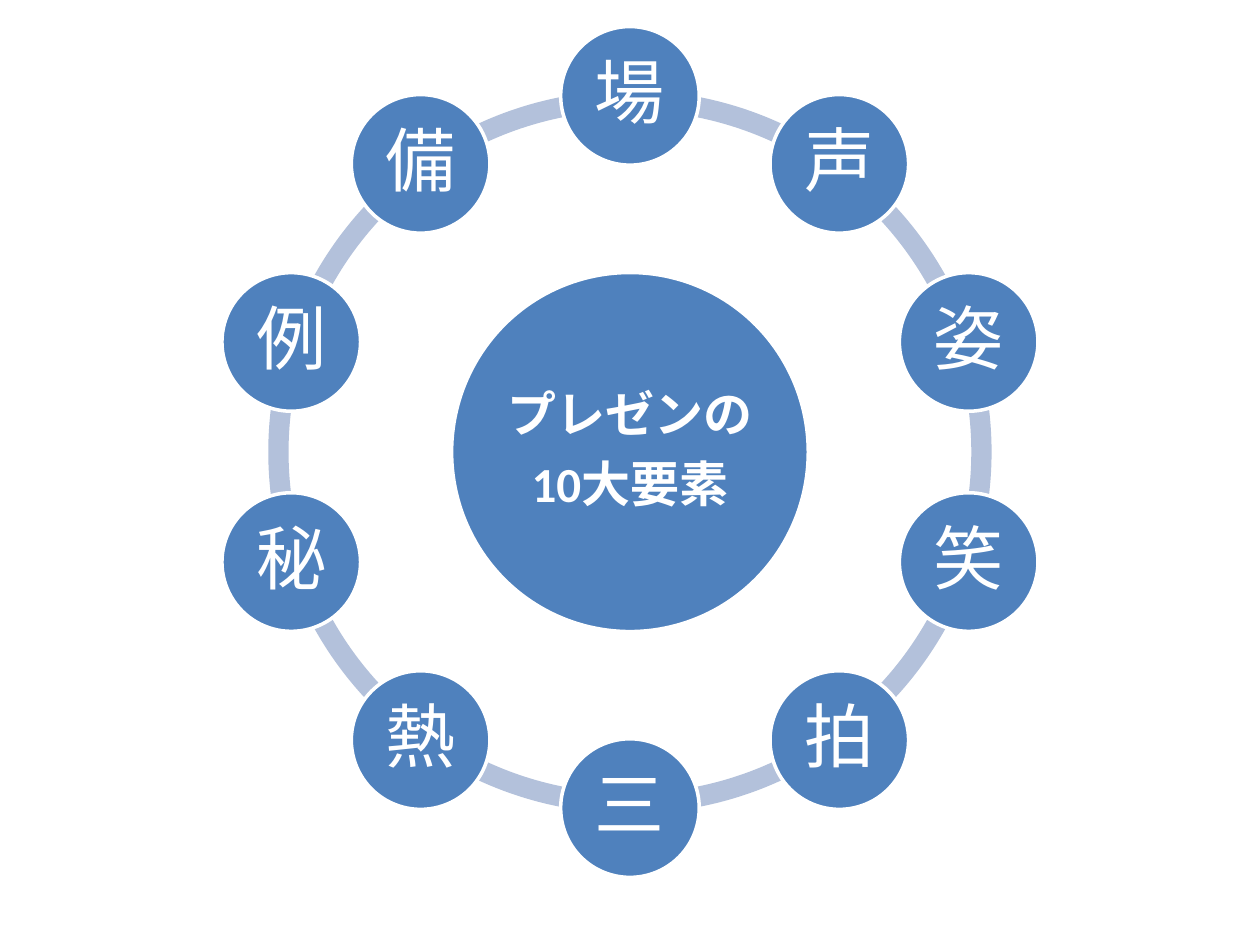
import math
from dataclasses import dataclass

from lxml import etree
from pptx import Presentation
from pptx import util as u
from pptx.dml.color import RGBColor
from pptx.enum import lang, shapes, text
from pptx.oxml import ns
from pptx.shapes.autoshape import Shape
from pptx.shapes.shapetree import GroupShapes


@dataclass(frozen=True)
class Theme:
    disc: RGBColor = RGBColor(0x4F, 0x81, 0xBD)
    ring: RGBColor = RGBColor(0xB3, 0xC1, 0xDB)
    light: RGBColor = RGBColor(0xFF, 0xFF, 0xFF)
    font: str = "Calibri"
    title_size: float = 28
    element_size: float = 40
    outline: float = 2


@dataclass(frozen=True)
class Disc:
    lines: tuple[str, ...]
    x: float
    y: float
    width: float
    height: float
    size: float
    inset: float
    bold: bool = False


THEME = Theme()
ELEMENTS = "場声姿笑拍三熱秘例備"
STEP = 360 / len(ELEMENTS)
CENTER_X, CENTER_Y = 360, 258.3
ORBIT = 203.5
RING_DIAMETER = 413.3
RING_THICKNESS = 0.028
ADJUSTMENT_PER_DEGREE = 0.6


def add_centered(
    group: GroupShapes, kind: shapes.MSO_SHAPE, x: float, y: float,
    width: float, height: float, color: RGBColor,
) -> Shape:
    shape = group.add_shape(
        kind, u.Pt(x - width / 2), u.Pt(y - height / 2), u.Pt(width), u.Pt(height)
    )
    shape.shadow.inherit = False
    shape.fill.solid()
    shape.fill.fore_color.rgb = color
    return shape


def draw_arc(group: GroupShapes, start: float) -> None:
    arc = add_centered(
        group, shapes.MSO_SHAPE.BLOCK_ARC, CENTER_X, CENTER_Y,
        RING_DIAMETER, RING_DIAMETER, THEME.ring,
    )
    arc.line.fill.background()
    arc.adjustments[0] = start % 360 * ADJUSTMENT_PER_DEGREE
    arc.adjustments[1] = (start + STEP) % 360 * ADJUSTMENT_PER_DEGREE
    arc.adjustments[2] = RING_THICKNESS


def draw_disc(group: GroupShapes, disc: Disc) -> None:
    oval = add_centered(
        group, shapes.MSO_SHAPE.OVAL, disc.x, disc.y, disc.width, disc.height, THEME.disc
    )
    oval.line.color.rgb = THEME.light
    oval.line.width = u.Pt(THEME.outline)
    box = oval.text_frame
    box.word_wrap = True
    box.vertical_anchor = text.MSO_ANCHOR.MIDDLE
    box.margin_left = box.margin_right = u.Pt(disc.inset)
    box.margin_top = box.margin_bottom = u.Pt(disc.inset)
    for index, line in enumerate(disc.lines):
        para = box.paragraphs[0] if index == 0 else box.add_paragraph()
        para.alignment = text.PP_ALIGN.CENTER
        para.line_spacing = 0.9
        para.space_after = u.Pt(0)
        after = para._p.pPr.find(ns.qn("a:spcAft"))
        after.remove(after[0])
        etree.SubElement(after, ns.qn("a:spcPct"), val="35000")
        span = para.add_run()
        span.text = line
        span.font.name = THEME.font
        span.font.size = u.Pt(disc.size)
        span.font.bold = disc.bold
        span.font.color.rgb = THEME.light
        span.font.language_id = lang.MSO_LANGUAGE_ID.JAPANESE


def main() -> None:
    deck = Presentation()
    deck.slide_width, deck.slide_height = u.Pt(720), u.Pt(540)
    page = deck.slides.add_slide(deck.slide_layouts[6])
    group = page.shapes.add_group_shape().shapes

    for index in range(len(ELEMENTS)):
        draw_arc(group, index * STEP - 90)

    draw_disc(group, Disc(
        ("プレゼンの", "10大要素"), CENTER_X, CENTER_Y, 203.8, 205.2,
        THEME.title_size, 1, True,
    ))
    for index, element in enumerate(ELEMENTS):
        angle = math.radians(index * STEP - 90)
        draw_disc(group, Disc(
            (element,), CENTER_X + ORBIT * math.cos(angle),
            CENTER_Y + ORBIT * math.sin(angle), 79.2, 79.2, THEME.element_size, 4,
        ))
    deck.save("out.pptx")


if __name__ == "__main__":
    main()
